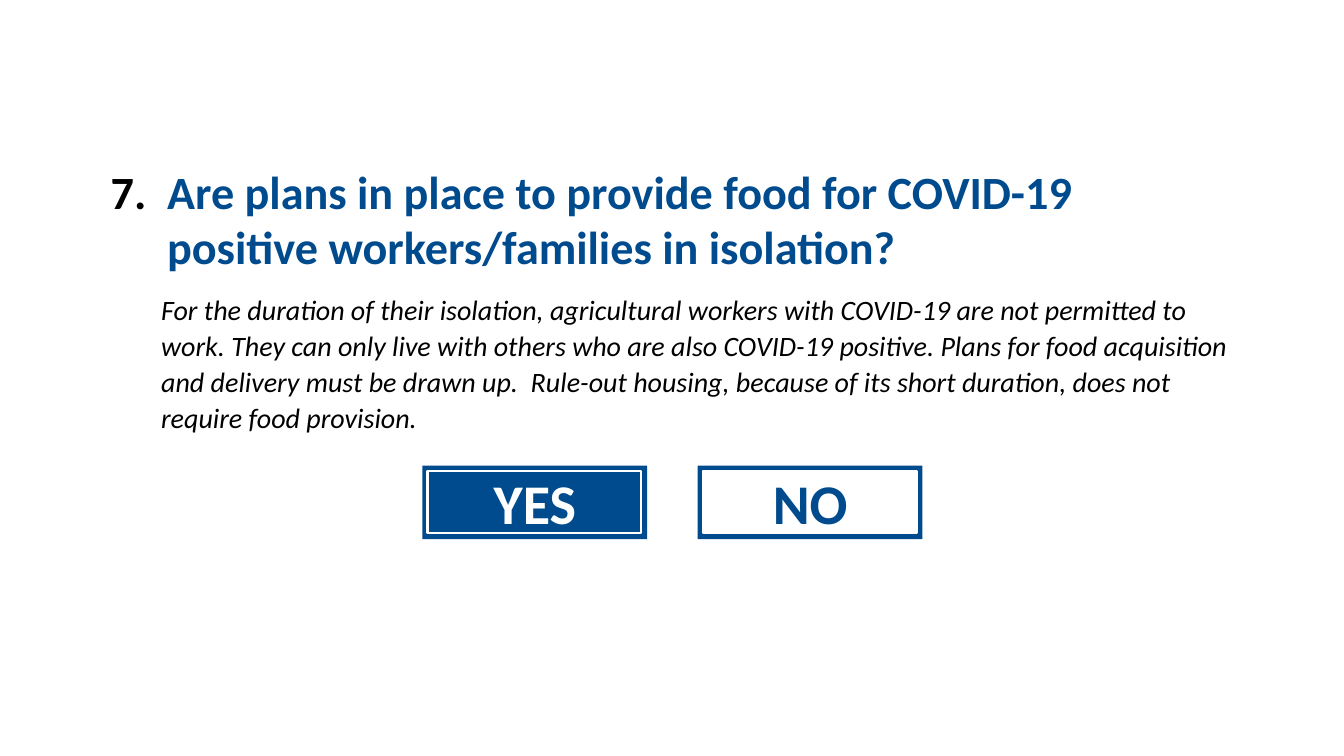
from dataclasses import dataclass
from typing import Optional

from lxml.etree import SubElement
from pptx import Presentation
from pptx.dml.color import RGBColor
from pptx.enum.shapes import MSO_SHAPE
from pptx.enum.text import MSO_AUTO_SIZE, PP_ALIGN
from pptx.oxml.ns import qn
from pptx.shapes.shapetree import _BaseGroupShapes
from pptx.text.text import _Paragraph
from pptx.util import Emu, Pt

EMU_PER_PX = 9144
FONT = "Calibri"
COLORS = {"blue": "004B8D", "white": "FFFFFF", "black": "000000"}

QUESTION_NUMBER = 7
QUESTION = "Are plans in place to provide food for COVID-19 positive workers/families in isolation?"
EXPLANATION = (
    "For the duration of their isolation, agricultural workers with COVID-19 are not permitted to work. "
    "They can only live with others who are also COVID-19 positive. "
    "Plans for food acquisition and delivery must be drawn up.  "
    "Rule-out housing, because of its short duration, does not require food provision."
)


@dataclass(frozen=True)
class Area:
    left: int
    top: int
    width: int
    height: int

    def emu(self) -> tuple[Emu, Emu, Emu, Emu]:
        return px(self.left), px(self.top), px(self.width), px(self.height)


@dataclass(frozen=True)
class TextStyle:
    size: int
    color: str
    bold: bool = False
    italic: bool = False


@dataclass(frozen=True)
class Answer:
    label: str
    left: int
    inner_fill: Optional[str]
    text_color: str


ANSWERS = [
    Answer("YES", 419, None, "white"),
    Answer("NO", 692, "white", "blue"),
]


def px(length: int) -> Emu:
    return Emu(length * EMU_PER_PX)


def color(name: str) -> RGBColor:
    return RGBColor.from_string(COLORS[name])


def add_text(shapes: _BaseGroupShapes, area: Area, text: str, style: TextStyle) -> _Paragraph:
    box = shapes.add_textbox(*area.emu())
    frame = box.text_frame
    frame.text = text
    frame.word_wrap = True
    frame.auto_size = MSO_AUTO_SIZE.SHAPE_TO_FIT_TEXT
    para = frame.paragraphs[0]
    for span in para.runs:
        span.font.name = FONT
        span.font.size = Pt(style.size)
        span.font.bold = style.bold
        span.font.italic = style.italic
        span.font.color.rgb = color(style.color)
    return para


def add_rectangle(
    shapes: _BaseGroupShapes, area: Area, fill: Optional[str], line: Optional[str] = None
) -> None:
    box = shapes.add_shape(MSO_SHAPE.RECTANGLE, *area.emu())
    box.shadow.inherit = False
    if fill:
        box.fill.solid()
        box.fill.fore_color.rgb = color(fill)
    else:
        box.fill.background()
    if line:
        box.line.color.rgb = color(line)
        box.line.width = Pt(1.5)
    else:
        box.line.fill.background()


def add_answer(shapes: _BaseGroupShapes, answer: Answer) -> None:
    group = shapes.add_group_shape().shapes
    add_rectangle(group, Area(answer.left, 462, 223, 73), "blue")
    add_rectangle(group, Area(answer.left + 5, 467, 212, 62), answer.inner_fill, "white")
    label_area = Area(answer.left + 59, 460, 105, 77)
    para = add_text(group, label_area, answer.label, TextStyle(40, answer.text_color, bold=True))
    para.alignment = PP_ALIGN.CENTER


def number_paragraph(para: _Paragraph, start: int, indent: int, number_color: str) -> None:
    properties = para._p.get_or_add_pPr()
    properties.set("marL", str(px(indent)))
    properties.set("indent", str(-px(indent)))
    bullet_color = SubElement(properties, qn("a:buClr"))
    SubElement(bullet_color, qn("a:srgbClr"), val=COLORS[number_color])
    SubElement(properties, qn("a:buFont"), typeface=FONT)
    SubElement(properties, qn("a:buAutoNum"), type="arabicPeriod", startAt=str(start))


def main() -> None:
    deck = Presentation()
    deck.slide_width, deck.slide_height = px(1333), px(750)
    page = deck.slides.add_slide(deck.slide_layouts[6])

    for answer in ANSWERS:
        add_answer(page.shapes, answer)

    explanation = add_text(
        page.shapes, Area(150, 283, 1097, 153), EXPLANATION, TextStyle(20, "black", italic=True)
    )
    explanation.line_spacing = 1.07
    explanation.space_after = Pt(8)

    question = add_text(
        page.shapes, Area(100, 157, 1133, 121), QUESTION, TextStyle(33, "blue", bold=True)
    )
    number_paragraph(question, QUESTION_NUMBER, 56, "black")

    deck.save("out.pptx")


if __name__ == "__main__":
    main()
